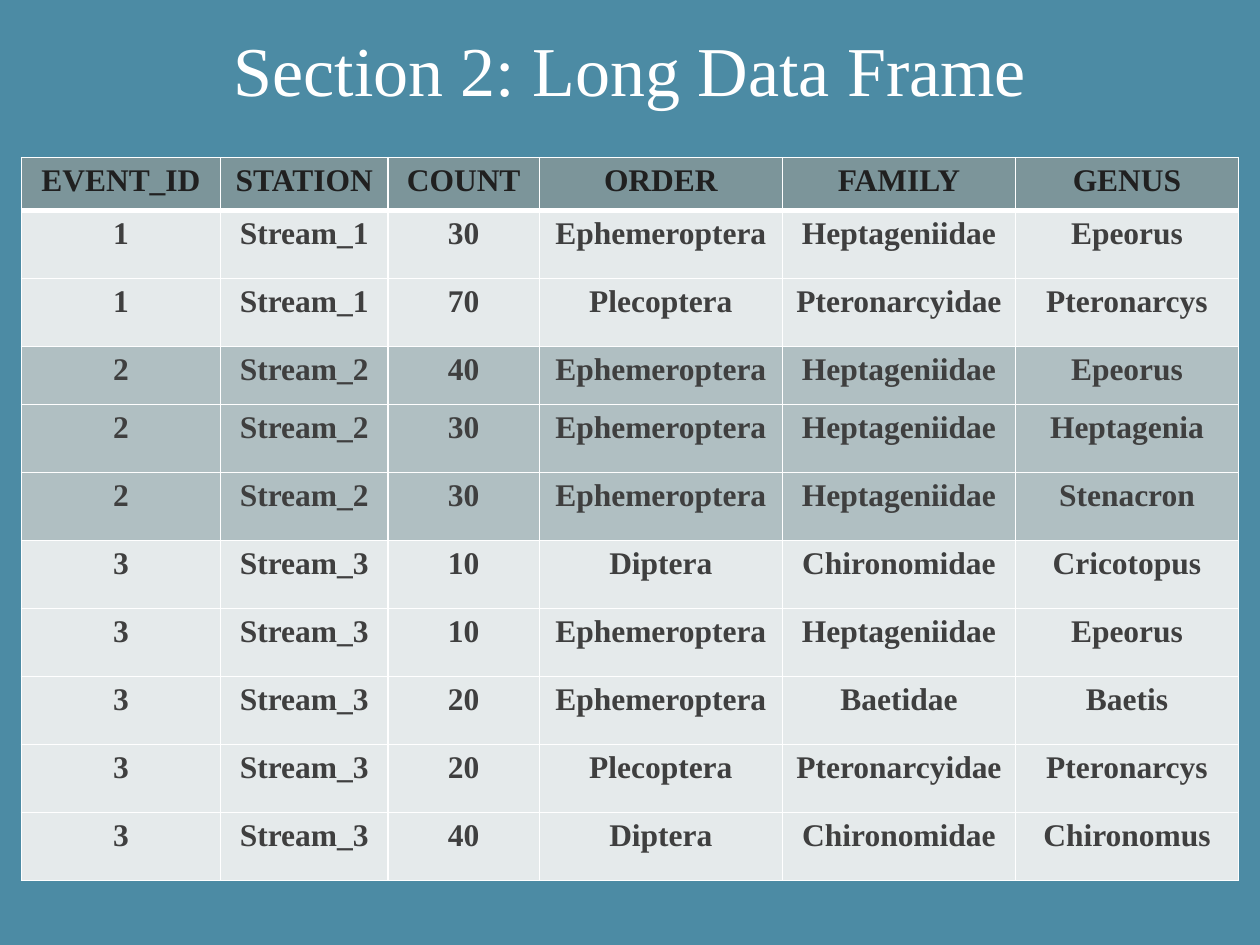
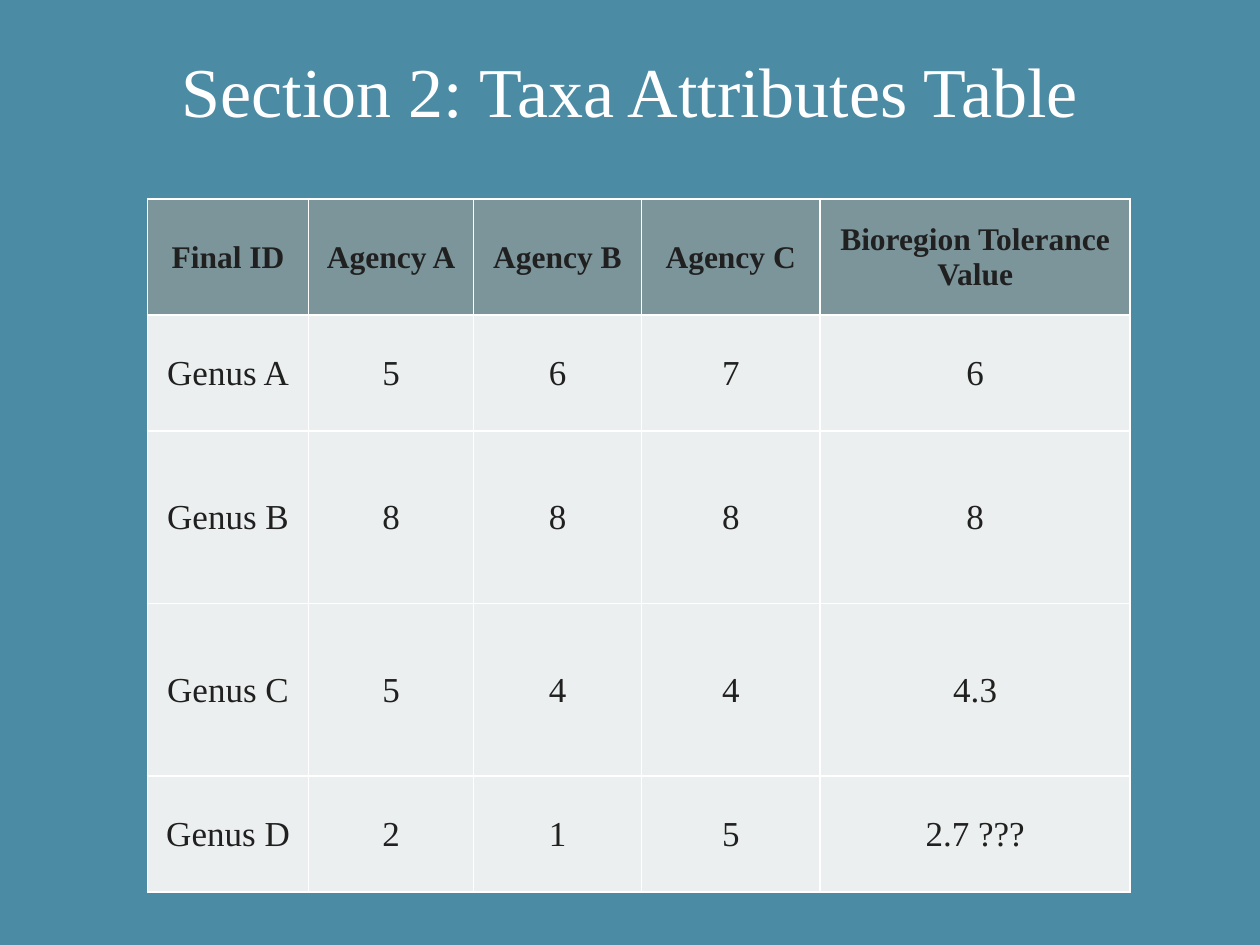
from lxml import etree
from pptx import Presentation
from pptx import util as u
from pptx.dml.color import RGBColor
from pptx.enum import text
from pptx.oxml import ns

COLORS = {
    "background": "4C8BA4", "white": "FFFFFF", "header": "7C959A",
    "light": "E5EAEB", "shaded": "B0BFC2", "pale": "ECEFEF",
    "dark": "202020", "gray": "3F3F3F",
}
FONT = "Times New Roman"
TITLE_ONLY = 5

SAMPLES = [
    ("EVENT_ID", "STATION", "COUNT", "ORDER", "FAMILY", "GENUS"),
    ("1", "Stream_1", "30", "Ephemeroptera", "Heptageniidae", "Epeorus"),
    ("1", "Stream_1", "70", "Plecoptera", "Pteronarcyidae", "Pteronarcys"),
    ("2", "Stream_2", "40", "Ephemeroptera", "Heptageniidae", "Epeorus"),
    ("2", "Stream_2", "30", "Ephemeroptera", "Heptageniidae", "Heptagenia"),
    ("2", "Stream_2", "30", "Ephemeroptera", "Heptageniidae", "Stenacron"),
    ("3", "Stream_3", "10", "Diptera", "Chironomidae", "Cricotopus"),
    ("3", "Stream_3", "10", "Ephemeroptera", "Heptageniidae", "Epeorus"),
    ("3", "Stream_3", "20", "Ephemeroptera", "Baetidae", "Baetis"),
    ("3", "Stream_3", "20", "Plecoptera", "Pteronarcyidae", "Pteronarcys"),
    ("3", "Stream_3", "40", "Diptera", "Chironomidae", "Chironomus"),
]
TOLERANCES = [
    ("Final ID", "Agency A", "Agency B", "Agency C", "Bioregion Tolerance Value"),
    ("Genus A", "5", "6", "7", "6"),
    ("Genus B", "8", "8", "8", "8"),
    ("Genus C", "5", "4", "4", "4.3"),
    ("Genus D", "2", "1", "5", "2.7 ???"),
]


def rgb(name):
    return RGBColor.from_string(COLORS[name])


class SlideWriter:
    def __init__(self, deck):
        self.deck = deck
        self.page = None

    def new_page(self):
        self.page = self.deck.slides.add_slide(self.deck.slide_layouts[TITLE_ONLY])
        fill = self.page.background.fill
        fill.solid()
        fill.fore_color.rgb = rgb("background")

    def format_text(self, frame, size, color, bold=False):
        for para in frame.paragraphs:
            para.alignment = text.PP_ALIGN.CENTER
            for span in para.runs:
                span.font.name = FONT
                span.font.size = u.Pt(size)
                span.font.bold = bold
                span.font.color.rgb = rgb(color)

    def title(self, words, left, top, width, height):
        box = self.page.shapes.title
        box.left, box.top = u.Inches(left), u.Inches(top)
        box.width, box.height = u.Inches(width), u.Inches(height)
        frame = box.text_frame
        frame.text = words
        frame.auto_size = text.MSO_AUTO_SIZE.NONE
        frame.vertical_anchor = text.MSO_ANCHOR.TOP
        self.format_text(frame, 40, "white")

    def borders(self, cell, top=1, bottom=1):
        """Draw white cell edges; widths are in points."""
        properties = cell._tc.get_or_add_tcPr()
        edges = {"lnL": 1, "lnR": 1, "lnT": top, "lnB": bottom}
        for position, (edge, width) in enumerate(edges.items()):
            line = etree.Element(ns.qn("a:" + edge), w=str(u.Pt(width)))
            fill = etree.SubElement(line, ns.qn("a:solidFill"))
            etree.SubElement(fill, ns.qn("a:srgbClr"), val=COLORS["white"])
            properties.insert(position, line)

    def table(self, rows, left, top, widths, heights, row_fill, body,
              header_rule=1, compact=False):
        """Draw a headed table; row_fill maps a row's values to a colour name."""
        grid = self.page.shapes.add_table(
            len(rows), len(widths), u.Inches(left), u.Inches(top),
            u.Inches(sum(widths)), u.Inches(sum(heights))).table
        for column, width in zip(grid.columns, widths):
            column.width = u.Inches(width)
        for row, height in zip(grid.rows, heights):
            row.height = u.Inches(height)
        header = {"size": 18, "color": "dark", "bold": True}
        for number, values in enumerate(rows):
            for column, value in enumerate(values):
                cell = grid.cell(number, column)
                cell.text_frame.text = value
                self.format_text(cell.text_frame, **(body if number else header))
                cell.fill.solid()
                cell.fill.fore_color.rgb = rgb(row_fill(values) if number else "header")
                self.borders(cell, top=header_rule if number == 1 else 1,
                             bottom=header_rule if number == 0 else 1)
                if compact:
                    cell.vertical_anchor = text.MSO_ANCHOR.MIDDLE
                    cell.margin_left = cell.margin_right = u.Inches(0.01)
                    cell.margin_top, cell.margin_bottom = u.Inches(0.01), 0


def main():
    deck = Presentation()
    deck.slide_width, deck.slide_height = u.Inches(10), u.Inches(7.5)
    writer = SlideWriter(deck)

    writer.new_page()
    writer.title("Section 2: Long Data Frame", 0, 0.16, 10, 0.76)
    writer.table(
        SAMPLES, 0.17, 1.25, [1.58, 1.33, 1.2, 1.93, 1.85, 1.77],
        [0.42, 0.54, 0.54, 0.46] + [0.54] * 7,
        lambda values: "shaded" if values[0] == "2" else "light",
        {"size": 18, "color": "gray", "bold": True}, header_rule=3)

    writer.new_page()
    writer.title("Section 2: Taxa Attributes Table", 0.5, 0.33, 9, 1.17)
    writer.table(
        TOLERANCES, 1.17, 1.58, [1.28, 1.31, 1.33, 1.42, 2.46],
        [0.92, 0.92, 1.37, 1.37, 0.92], lambda values: "pale",
        {"size": 20, "color": "dark"}, compact=True)

    deck.save("out.pptx")


if __name__ == "__main__":
    main()
